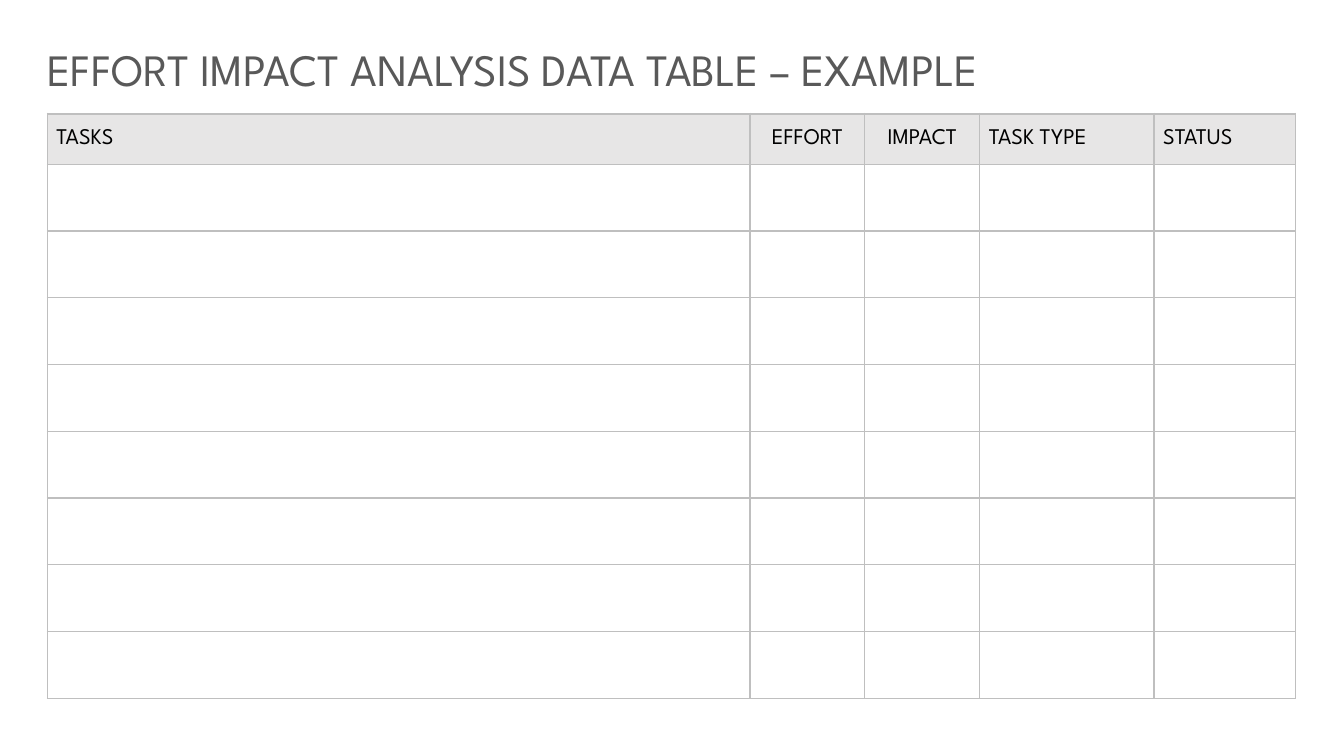
import pptx
import pptx.dml.color
import pptx.enum.text
import pptx.oxml
import pptx.oxml.ns
import pptx.util

Pt = pptx.util.Pt
Align = pptx.enum.text.PP_ALIGN
Anchor = pptx.enum.text.MSO_ANCHOR

FONT = "League Spartan"
BORDER = "BFBFBF"
COLUMNS = [
    ("TASKS", 501.84, Align.LEFT),
    ("EFFORT", 82.08, Align.CENTER),
    ("IMPACT", 82.08, Align.CENTER),
    ("TASK TYPE", 124.56, Align.LEFT),
    ("STATUS", 100.8, Align.LEFT),
]
TASK_ROWS = 8
HEADER_HEIGHT = 36


def color(value):
    """Turn a hex string into a colour."""
    return pptx.dml.color.RGBColor.from_string(value)


def write_text(frame, text, size=16, fill="000000", align=Align.LEFT):
    """Write one formatted paragraph into a text frame."""
    paragraph = frame.paragraphs[0]
    paragraph.alignment = align
    run = paragraph.add_run()
    run.text = text
    run.font.name = FONT
    run.font.size = Pt(size)
    run.font.color.rgb = color(fill)


def format_cell(cell, fill, top_width=1):
    """Fill a cell and draw its four borders."""
    cell.fill.solid()
    cell.fill.fore_color.rgb = color(fill)
    properties = cell._tc.get_or_add_tcPr()
    namespace = pptx.oxml.ns.nsdecls("a")
    widths = {"lnL": 1, "lnR": 1, "lnT": top_width, "lnB": 1}
    for position, (side, width) in enumerate(widths.items()):
        properties.insert(position, pptx.oxml.parse_xml(
            f'<a:{side} {namespace} w="{int(Pt(width))}"><a:solidFill>'
            f'<a:srgbClr val="{BORDER}"/></a:solidFill></a:{side}>'))


def add_title(slide, text, left, top, width, height):
    """Place the slide title in the given box."""
    title = slide.shapes.title
    title.left, title.top, title.width, title.height = map(Pt, (left, top, width, height))
    frame = title.text_frame
    frame.word_wrap = True
    frame.auto_size = pptx.enum.text.MSO_AUTO_SIZE.SHAPE_TO_FIT_TEXT
    frame.vertical_anchor = Anchor.TOP
    write_text(frame, text, size=32, fill="595959")


def add_task_table(slide, left, top, width, height):
    """Place the task table, with a header and equal empty rows, in the given box."""
    shape = slide.shapes.add_table(
        TASK_ROWS + 1, len(COLUMNS), Pt(left), Pt(top), Pt(width), Pt(height))
    table = shape.table
    table.horz_banding = False
    table.first_row = True
    for row in table.rows:
        row.height = Pt((height - HEADER_HEIGHT) / TASK_ROWS)
    table.rows[0].height = Pt(HEADER_HEIGHT)
    for index, (label, column_width, align) in enumerate(COLUMNS):
        table.columns[index].width = Pt(column_width)
        header = table.cell(0, index)
        header.vertical_anchor = Anchor.MIDDLE
        header.margin_left = Pt(6.5 if align == Align.LEFT else 0.7)
        header.margin_right = header.margin_top = Pt(0.7)
        header.margin_bottom = Pt(0)
        write_text(header.text_frame, label, align=align)
        format_cell(header, "E7E6E6", top_width=2.25)
        for row_index in range(1, TASK_ROWS + 1):
            format_cell(table.cell(row_index, index), "FFFFFF",
                        top_width=1)


def main():
    """Build and save the presentation."""
    presentation = pptx.Presentation()
    presentation.slide_width = Pt(960)
    presentation.slide_height = Pt(540)
    slide = presentation.slides.add_slide(presentation.slide_layouts[5])
    slide.background.fill.solid()
    slide.background.fill.fore_color.rgb = color("FFFFFF")
    add_task_table(slide, 33.84, 81.36, 891.36, 417.6)
    add_title(slide, "EFFORT IMPACT ANALYSIS DATA TABLE – EXAMPLE", 26.64, 25.92, 868.32, 46.08)
    presentation.save("out.pptx")


if __name__ == "__main__":
    main()
